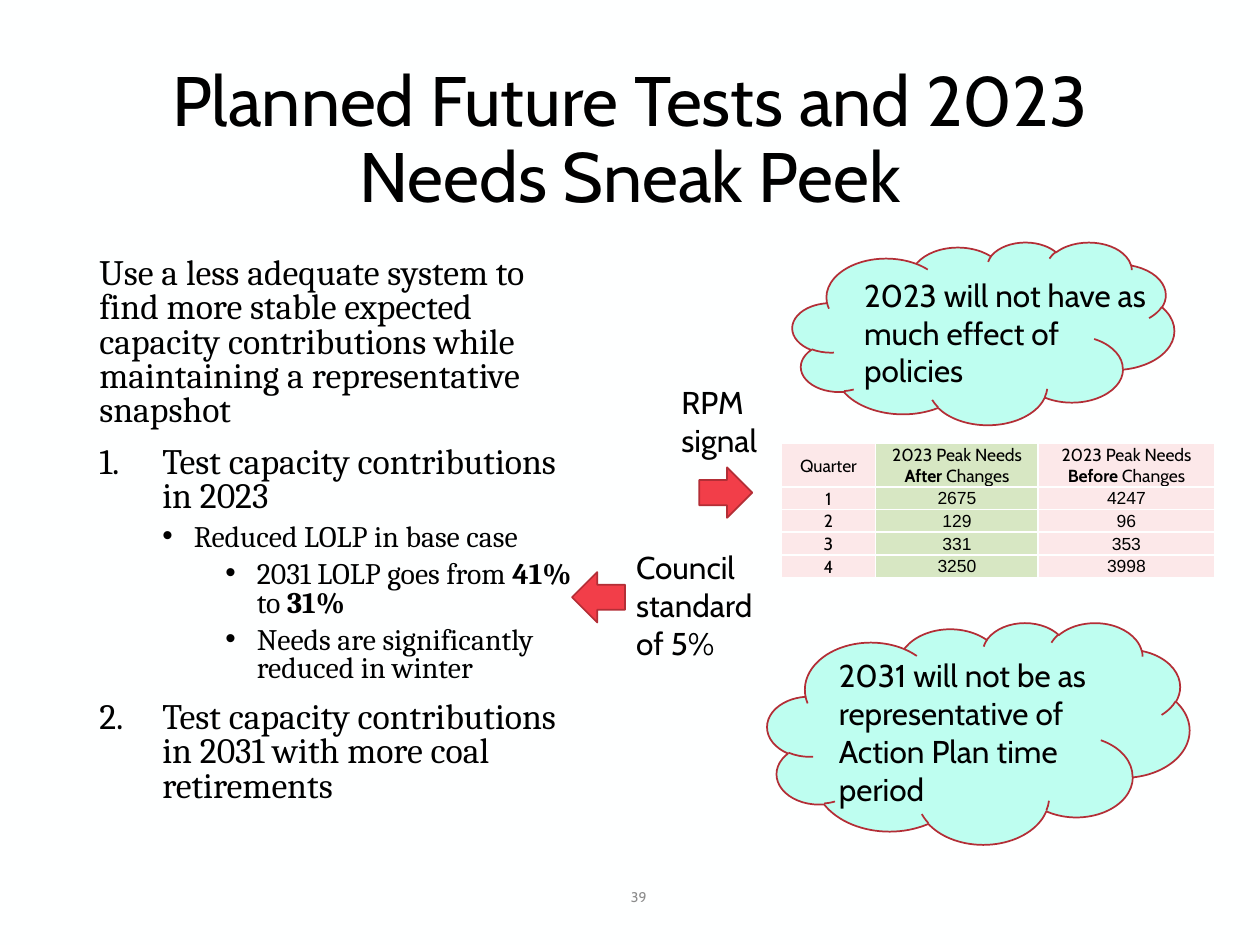
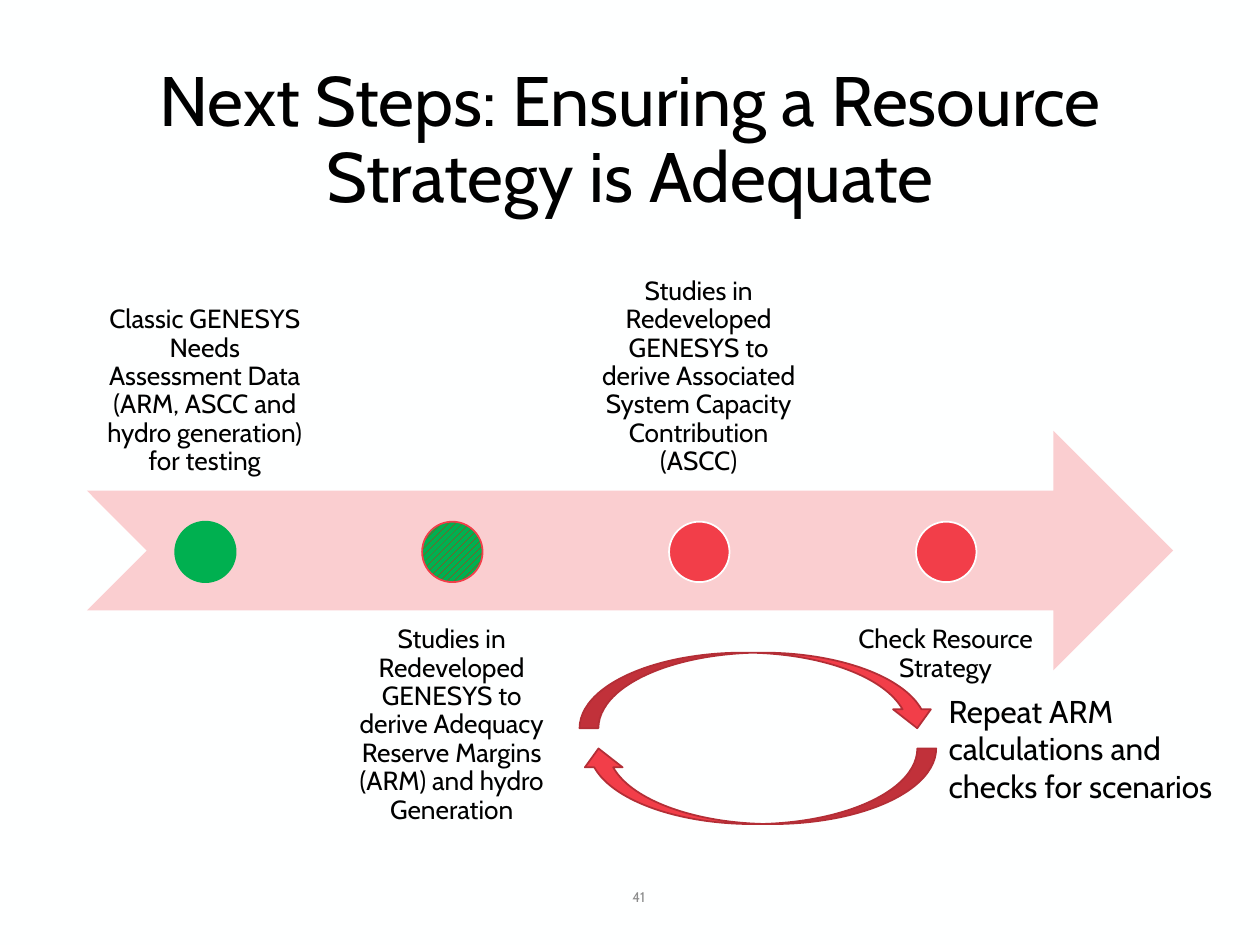
from lxml import etree
from pptx import Presentation, util as u
from pptx.dml.color import RGBColor
from pptx.enum import dml, shapes, text
from pptx.oxml import ns

BLACK, WHITE, GREY = "000000", "FEFFFF", "8C8C8C"
RED, DARK_RED, PALE_RED, ROSE = "F23E49", "B32E36", "FACED0", "FCE8E9"
GREEN, PALE_GREEN, MINT = "00B050", "D7E7C3", "BEFEF0"
CENTER, LEFT = text.PP_ALIGN.CENTER, text.PP_ALIGN.LEFT
TOP, MIDDLE, BOTTOM = text.MSO_ANCHOR.TOP, text.MSO_ANCHOR.MIDDLE, text.MSO_ANCHOR.BOTTOM
KIND = shapes.MSO_SHAPE
color = RGBColor.from_string


def write(para, spans, size, font="Cabin", ink=BLACK, align=LEFT, spacing=1.0):
    """Fill a paragraph; every second span is bold."""
    para.alignment = align
    para.line_spacing = spacing
    for number, words in enumerate(spans):
        span = para.add_run()
        span.text = words
        span.font.size = u.Pt(size)
        span.font.name = font
        span.font.bold = number % 2 == 1
        span.font.color.rgb = color(ink)


def add_text(page, at, words, size, anchor=TOP, inset=None, **style):
    frame = page.shapes.add_textbox(*map(u.Inches, at)).text_frame
    frame.word_wrap = True
    frame.vertical_anchor = anchor
    if inset:
        frame.margin_left = frame.margin_right = u.Inches(inset)
        frame.margin_top = frame.margin_bottom = u.Inches(inset)
    if words:
        write(frame.paragraphs[0], [words], size, **style)
    return frame


deck = Presentation()
deck.slide_width, deck.slide_height = u.Inches(10), u.Inches(7.5)

# Background, title and page number on both slides
pages = []
for title, number in [("Planned Future Tests and 2023 Needs Sneak Peek", "39"),
                      ("Next Steps: Ensuring a Resource Strategy is Adequate", "41")]:
    page = deck.slides.add_slide(deck.slide_layouts[6])
    page.background.fill.solid()
    page.background.fill.fore_color.rgb = color(WHITE)
    add_text(page, (0.69, 0.4, 8.62, 1.45), title, 40, MIDDLE, align=CENTER, spacing=0.9)
    add_text(page, (4.78, 6.92, 0.58, 0.4), number, 8, MIDDLE, align=CENTER, ink=GREY)
    pages.append(page)
tests, steps = pages

# Timeline steps: wording, fill, line; even ones sit above the arrow
timeline = [
    ("Classic GENESYS Needs Assessment Data (ARM, ASCC and hydro generation) for testing",
     GREEN, GREEN),
    ("Studies in Redeveloped GENESYS to derive Adequacy Reserve Margins (ARM) and hydro "
     "Generation", GREEN, RED),
    ("Studies in Redeveloped GENESYS to derive Associated System Capacity Contribution (ASCC)",
     RED, WHITE),
    ("Check Resource Strategy", RED, WHITE),
]
STEP_GAP = 1.96

# Shapes of both slides: page, kind, place, rotation, fill, line
drawings = [
    (tests, KIND.CLOUD, (6.29, 1.92, 3.03, 1.45), 0, MINT, DARK_RED),
    (tests, KIND.CLOUD, (6.09, 4.94, 3.35, 1.76), 0, MINT, DARK_RED),
    (tests, KIND.RIGHT_ARROW, (5.55, 3.71, 0.42, 0.4), 0, RED, DARK_RED),
    (tests, KIND.RIGHT_ARROW, (4.54, 4.54, 0.42, 0.4), 180, RED, DARK_RED),
    (steps, KIND.NOTCHED_RIGHT_ARROW, (0.69, 3.42, 8.62, 1.9), 0, PALE_RED, None),
    (steps, KIND.CURVED_DOWN_ARROW, (4.6, 5.94, 2.83, 0.6), 180, RED, DARK_RED),
    (steps, KIND.CURVED_DOWN_ARROW, (4.6, 5.18, 2.83, 0.6), 0, RED, DARK_RED),
]
for index, (words, fill, line) in enumerate(timeline):
    drawings.append((steps, KIND.OVAL, (1.39 + index * STEP_GAP, 4.14, 0.48, 0.48),
                     0, fill, line))

for page, kind, at, rotation, fill, line in drawings:
    shape = page.shapes.add_shape(kind, *map(u.Inches, at))
    shape.shadow.inherit = False
    shape.rotation = rotation
    if (fill, line) == (GREEN, RED):  # step in progress is hatched
        shape.fill.patterned()
        shape.fill.pattern = dml.MSO_PATTERN.WIDE_UPWARD_DIAGONAL
        shape.fill.fore_color.rgb = color("FF0000")
        shape.fill.back_color.rgb = color(fill)
    else:
        shape.fill.solid()
        shape.fill.fore_color.rgb = color(fill)
    if line:
        shape.line.color.rgb = color(line)
        shape.line.width = u.Pt(1)
    else:
        shape.line.fill.background()

# Timeline wording
for index, (words, fill, line) in enumerate(timeline):
    top, anchor = [(2, BOTTOM), (4.85, TOP)][index % 2]
    add_text(steps, (0.69 + index * STEP_GAP, top, 1.87, 1.9), words, 15, anchor, 0.12,
             align=CENTER, spacing=0.9)

# Callouts
for page, at, words in [
    (tests, (6.76, 2.14, 2.55, 1.01), "2023 will not have as much effect of policies"),
    (tests, (6.56, 5.16, 2.55, 1.31),
     "2031 will not be as representative of Action Plan time period"),
    (tests, (5.31, 2.99, 1.08, 0.71), "RPM signal"),
    (tests, (4.95, 4.3, 1.25, 1.01), "Council standard of 5%"),
    (steps, (7.43, 5.44, 2.5, 1.01), "Repeat ARM calculations and checks for scenarios"),
]:
    add_text(page, at, words, 18)

# Test plan: level, bullet, left margin, hanging indent, size, spans
plan = [
    (0, None, 0, 0, 20.4, ["Use a less adequate system to find more stable expected capacity "
                           "contributions while maintaining a representative snapshot"]),
    (0, "number", 0.5, 0.5, 20.4, ["Test capacity contributions in 2023"]),
    (1, "dot", 0.75, 0.25, 17, ["Reduced LOLP in base case"]),
    (2, "dot", 1.25, 0.25, 17, ["2031 LOLP goes from ", "41%", " to ", "31%"]),
    (2, "dot", 1.25, 0.25, 17, ["Needs are significantly reduced in winter"]),
    (0, "number", 0.5, 0.5, 20.4,
     ["Test capacity contributions in 2031 with more coal retirements"]),
]
frame = add_text(tests, (0.69, 2, 4.1, 4.76), None, 20.4)
for index, (level, bullet, margin, hanging, size, spans) in enumerate(plan):
    para = frame.add_paragraph() if index else frame.paragraphs[0]
    para.level = level
    if index:
        para.space_before = u.Pt(5 if level else 10)
    properties = para._p.get_or_add_pPr()
    properties.set("marL", str(u.Inches(margin)))
    properties.set("indent", str(-u.Inches(hanging)))
    if bullet == "number":
        etree.SubElement(properties, ns.qn("a:buFont"), typeface="+mj-lt")
        etree.SubElement(properties, ns.qn("a:buAutoNum"), type="arabicPeriod")
    elif bullet == "dot":
        etree.SubElement(properties, ns.qn("a:buFont"), typeface="Arial")
        etree.SubElement(properties, ns.qn("a:buChar"), char="•")
    write(para, spans, size, "Cambria", spacing=0.8)

# Peak needs table
needs = [
    [["Quarter"], ["2023 Peak Needs ", "After", " Changes"],
     ["2023 Peak Needs ", "Before", " Changes"]],
    [["1"], ["2675"], ["4247"]],
    [["2"], ["129"], ["96"]],
    [["3"], ["331"], ["353"]],
    [["4"], ["3250"], ["3998"]],
]
table = tests.shapes.add_table(5, 3, *map(u.Inches, (6.2, 3.52, 3.44, 1.05))).table
table.first_row = table.horz_banding = False
for column, width in zip(table.columns, (0.75, 1.29, 1.4)):
    column.width = u.Inches(width)
for r, row in enumerate(needs):
    table.rows[r].height = u.Inches(0.18 if r else 0.33)
    for c, spans in enumerate(row):
        cell = table.cell(r, c)
        cell.margin_left = cell.margin_right = cell.margin_top = u.Inches(0.01)
        cell.margin_bottom = 0
        cell.vertical_anchor = MIDDLE
        write(cell.text_frame.paragraphs[0], spans, 10, "Arial" if r and c else "Cabin",
              align=CENTER)
        properties = cell._tc.get_or_add_tcPr()
        for side in ("lnL", "lnR", "lnT", "lnB"):
            border = etree.SubElement(properties, ns.qn("a:" + side), w=str(u.Pt(1)))
            paint = etree.SubElement(border, ns.qn("a:solidFill"))
            etree.SubElement(paint, ns.qn("a:srgbClr"), val=WHITE)
        cell.fill.solid()
        cell.fill.fore_color.rgb = color(PALE_GREEN if c == 1 else ROSE)

deck.save("out.pptx")
